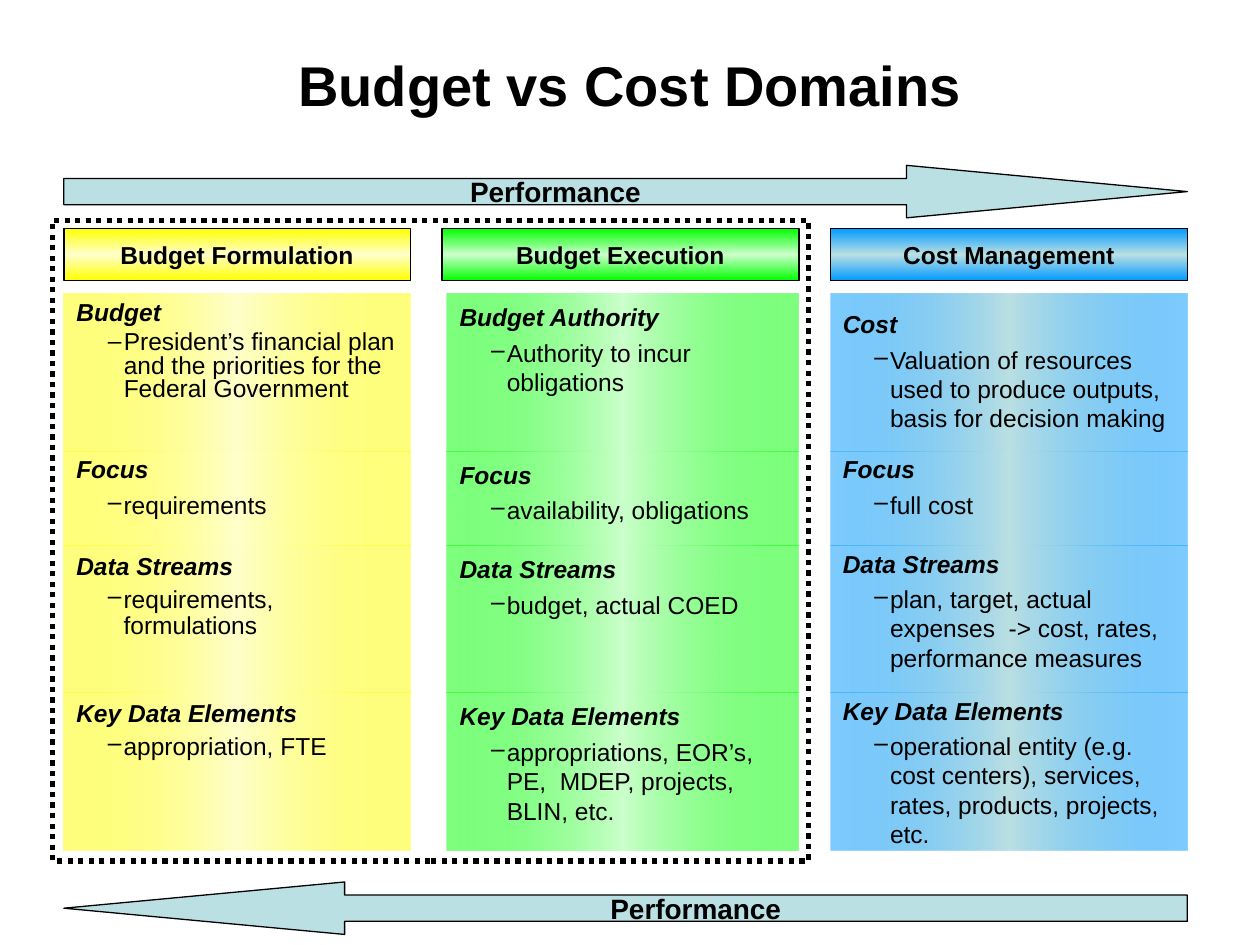
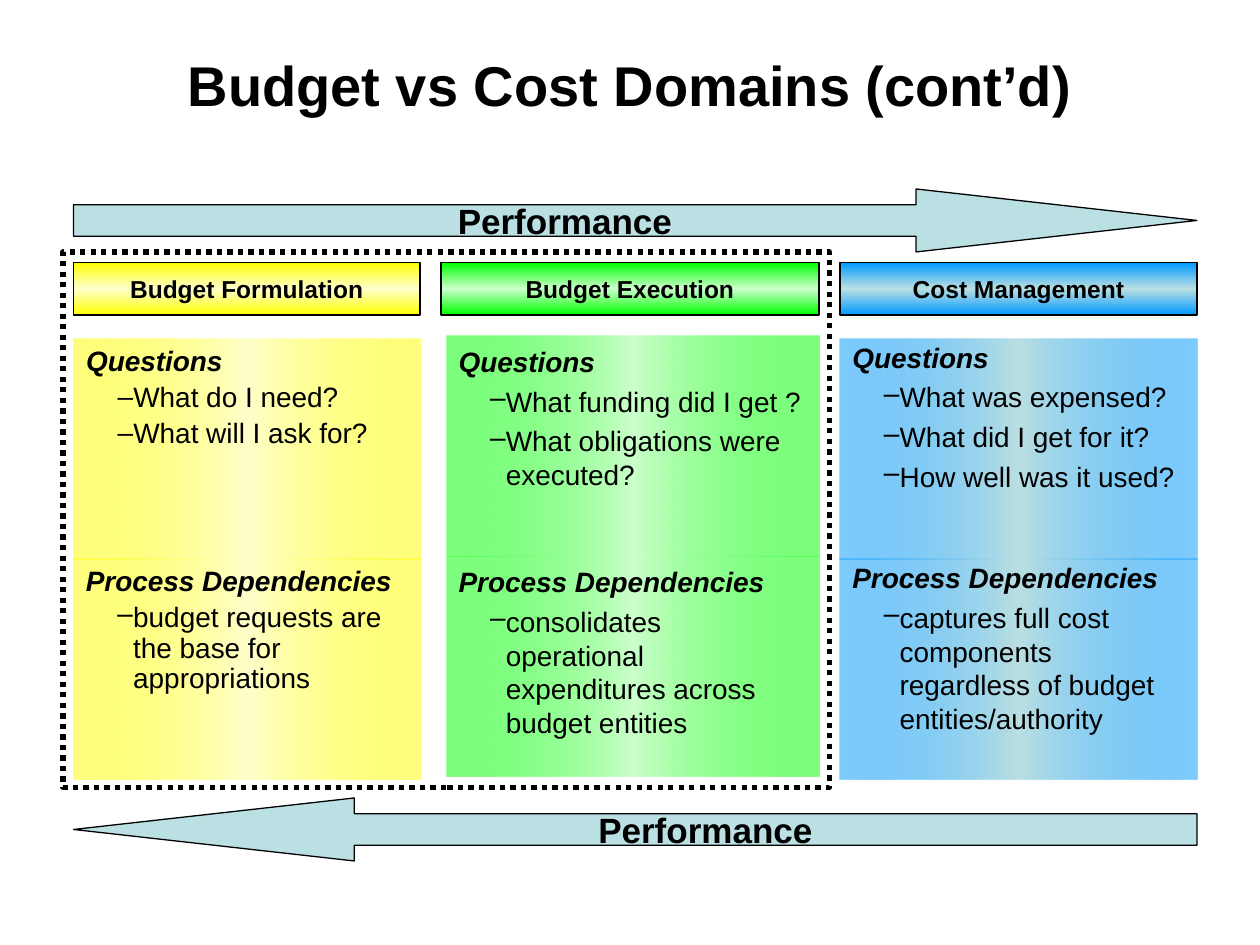
import pptx
import pptx.dml.color
import pptx.enum.dml
import pptx.enum.shapes
import pptx.enum.text
import pptx.oxml
import pptx.oxml.ns
import pptx.util

Pt = pptx.util.Pt
RGB = pptx.dml.color.RGBColor
SHAPE = pptx.enum.shapes.MSO_SHAPE
ALIGN = pptx.enum.text.PP_ALIGN
ANCHOR = pptx.enum.text.MSO_ANCHOR
qn = pptx.oxml.ns.qn

BLACK = RGB(0, 0, 0)
TEAL = RGB(0xBB, 0xE0, 0xE3)
YELLOW = RGB(0xFF, 0xFF, 0)
CREAM = RGB(0xFF, 0xFF, 0xCC)
GREEN = RGB(0, 0xFF, 0)
MINT = RGB(0xCC, 0xFF, 0xCC)
BLUE = RGB(0, 0x99, 0xFF)

FONT = "Arial"
WIDE = 642
POINT = 160.5

DOMAINS = [
    ("Budget Formulation", YELLOW, CREAM, (0.9, 0.9)),
    ("Budget Execution", GREEN, MINT, (1, 1)),
    ("Cost Management", BLUE, TEAL, (0.8, 1)),
]


class Deck:
    def __init__(self):
        self.file = pptx.Presentation()
        self.file.slide_width = Pt(720)
        self.file.slide_height = Pt(540)
        self.slide = None
        self.body = None

    def start(self, title):
        self.slide = self.file.slides.add_slide(self.file.slide_layouts[1])
        self.body = self.slide.placeholders[1]
        head = self.slide.shapes.title
        self.place(head, 96, 18, 528, 46)
        frame = head.text_frame
        frame.text = title
        frame.auto_size = pptx.enum.text.MSO_AUTO_SIZE.NONE
        frame.vertical_anchor = ANCHOR.TOP
        frame.margin_top, frame.margin_bottom = Pt(3), 0
        para = frame.paragraphs[0]
        para.alignment = ALIGN.CENTER
        para.line_spacing = 1.2
        self.style(para, 32)

    def place(self, shape, left, top, width, height):
        shape.left, shape.top = Pt(left), Pt(top)
        shape.width, shape.height = Pt(width), Pt(height)

    def style(self, para, size, bold=True, slant=False):
        for run in para.runs:
            font = run.font
            font.name, font.size = FONT, Pt(size)
            font.bold, font.italic = bold, slant
            font.color.rgb = BLACK

    def shape(self, kind, left, top, width, height):
        shape = self.slide.shapes.add_shape(
            kind, Pt(left), Pt(top), Pt(width), Pt(height))
        shape.shadow.inherit = False
        return shape

    def edge(self, shape, width=0.75):
        shape.line.color.rgb = BLACK
        shape.line.width = Pt(width)

    def label(self, shape, text, size):
        frame = shape.text_frame
        frame.text = text
        frame.word_wrap = False
        frame.vertical_anchor = ANCHOR.MIDDLE
        frame.paragraphs[0].alignment = ALIGN.CENTER
        self.style(frame.paragraphs[0], size)

    def blend(self, shape, edge, core, angle, alpha=100):
        shape.fill.gradient()
        shape.fill.gradient_angle = angle
        stops = shape._element.spPr.find(qn("a:gradFill")).find(qn("a:gsLst"))
        for stop in list(stops):
            stops.remove(stop)
        for spot, color, solid in ((0, edge, alpha), (50, core, 100),
                                   (100, edge, alpha)):
            stops.append(pptx.oxml.parse_xml(
                f'<a:gs {pptx.oxml.ns.nsdecls("a")} pos="{spot * 1000}">'
                f'<a:srgbClr val="{color}"><a:alpha val="{solid * 1000}"/>'
                '</a:srgbClr></a:gs>'))

    def arrow(self, kind, left, top, height, size):
        shape = self.shape(kind, left, top, WIDE, height)
        shape.adjustments[0] = 0.5
        shape.adjustments[1] = POINT / height
        shape.fill.solid()
        shape.fill.fore_color.rgb = TEAL
        self.edge(shape)
        self.label(shape, "Performance", size)

    def header(self, text, edge, core, left, top, width):
        shape = self.shape(SHAPE.RECTANGLE, left, top, width, 30)
        self.blend(shape, edge, core, 90)
        self.edge(shape)
        self.label(shape, text, 14)

    def bullet(self, para, left, char=None):
        props = para._p.get_or_add_pPr()
        props.set("marL", str(Pt(left)))
        props.set("indent", str(Pt(-9)))
        mark = props.makeelement(qn("a:buChar" if char else "a:buNone"), {})
        if char:
            mark.set("char", char)
        props.append(mark)

    def panel(self, spot, edge, core, lines, size, spaces, inset=4.8):
        if self.body is not None:
            shape, self.body = self.body, None
            self.place(shape, *spot)
        else:
            shape = self.shape(SHAPE.RECTANGLE, *spot)
        self.blend(shape, edge, core, 0, 50)
        shape.line.fill.background()
        frame = shape.text_frame
        frame.text = "\n".join(lines)
        frame.word_wrap = True
        frame.auto_size = pptx.enum.text.MSO_AUTO_SIZE.NONE
        frame.vertical_anchor = ANCHOR.TOP
        frame.margin_top = Pt(inset)
        for rank, para in enumerate(frame.paragraphs):
            first = rank == 0
            para.level = 0 if first else 1
            self.bullet(para, 9 if first else 27, None if first else "–")
            para.alignment = ALIGN.LEFT
            para.line_spacing = spaces[0 if first else 1]
            para.space_before = Pt(0 if first else 3.5)
            self.style(para, size, bold=first, slant=first)

    def frame(self, left, top, width, height):
        shape = self.shape(SHAPE.RECTANGLE, left, top, width, height)
        shape.fill.background()
        self.edge(shape, 3)
        shape.line.dash_style = pptx.enum.dml.MSO_LINE.ROUND_DOT

    def domains(self, title, spots, head, grid, cells, size, arrows, box,
                shifts=(0, 0, 0), special=None):
        special = special or {}
        self.start(title)
        left = spots[0][0]
        high, low, tall, big = arrows
        self.arrow(SHAPE.RIGHT_ARROW, left, high, tall, big)
        self.arrow(SHAPE.LEFT_ARROW, left, low, tall, big)
        for col, (name, edge, core, spaces) in enumerate(DOMAINS):
            x, width = spots[col]
            self.header(name, edge, core, x, head, width)
            trim = 3 if col == 1 else 0
            for row, lines in enumerate(cells[col]):
                top, end = grid[row], grid[row + 1]
                spot = (x + trim, top + shifts[col], width - trim, end - top)
                extra = {"spaces": spaces, **special.get((col, row), {})}
                self.panel(spot, edge, core, lines, size, **extra)
        self.frame(*box)


FACTS = [
    [
        ("Budget", "President’s financial plan and the priorities for the "
         "Federal Government"),
        ("Focus", "requirements"),
        ("Data Streams", "requirements, formulations"),
        ("Key Data Elements", "appropriation, FTE"),
    ],
    [
        ("Budget Authority", "Authority to incur obligations"),
        ("Focus", "availability, obligations"),
        ("Data Streams", "budget, actual COED"),
        ("Key Data Elements",
         "appropriations, EOR’s, PE,  MDEP, projects, BLIN, etc."),
    ],
    [
        ("Cost", "Valuation of resources used to produce outputs, basis for "
         "decision making"),
        ("Focus", "full cost"),
        ("Data Streams", "plan, target, actual expenses  -> cost, rates, "
         "performance measures"),
        ("Key Data Elements", "operational entity (e.g. cost centers), "
         "services, rates, products, projects, etc."),
    ],
]

ASKS = [
    [
        ("Questions", "What do I need?", "What will I ask for?"),
        ("Process Dependencies",
         "budget requests are the base for appropriations"),
    ],
    [
        ("Questions", "What funding did I get ?",
         "What obligations were executed?"),
        ("Process Dependencies", "consolidates operational expenditures "
         "across budget entities"),
    ],
    [
        ("Questions", "What was expensed?", "What did I get for it?",
         "How well was it used?"),
        ("Process Dependencies", "captures full cost components regardless "
         "of budget entities/authority"),
    ],
]


def main():
    deck = Deck()
    deck.domains(
        "Budget vs Cost Domains",
        spots=[(36.5, 198), (252.5, 204), (474.5, 204)],
        head=130.5, grid=[168, 258, 312, 396, 486], cells=FACTS, size=14,
        arrows=(94.5, 504, 30, 16), box=(30, 126, 432, 366),
        special={(0, 0): {"spaces": (0.8, 0.8)},
                 (0, 1): {"spaces": (0.8, 1)},
                 (2, 0): {"inset": 12}})
    deck.domains(
        "Budget vs Cost Domains (cont’d)",
        spots=[(42, 198), (252, 216), (480, 204)],
        head=150, grid=[193.5, 319.5, 445.5], cells=ASKS, size=16,
        arrows=(108, 456, 36, 20), box=(36, 144, 438, 306),
        shifts=(0, -1.5, 0))
    deck.file.save("out.pptx")


if __name__ == "__main__":
    main()
